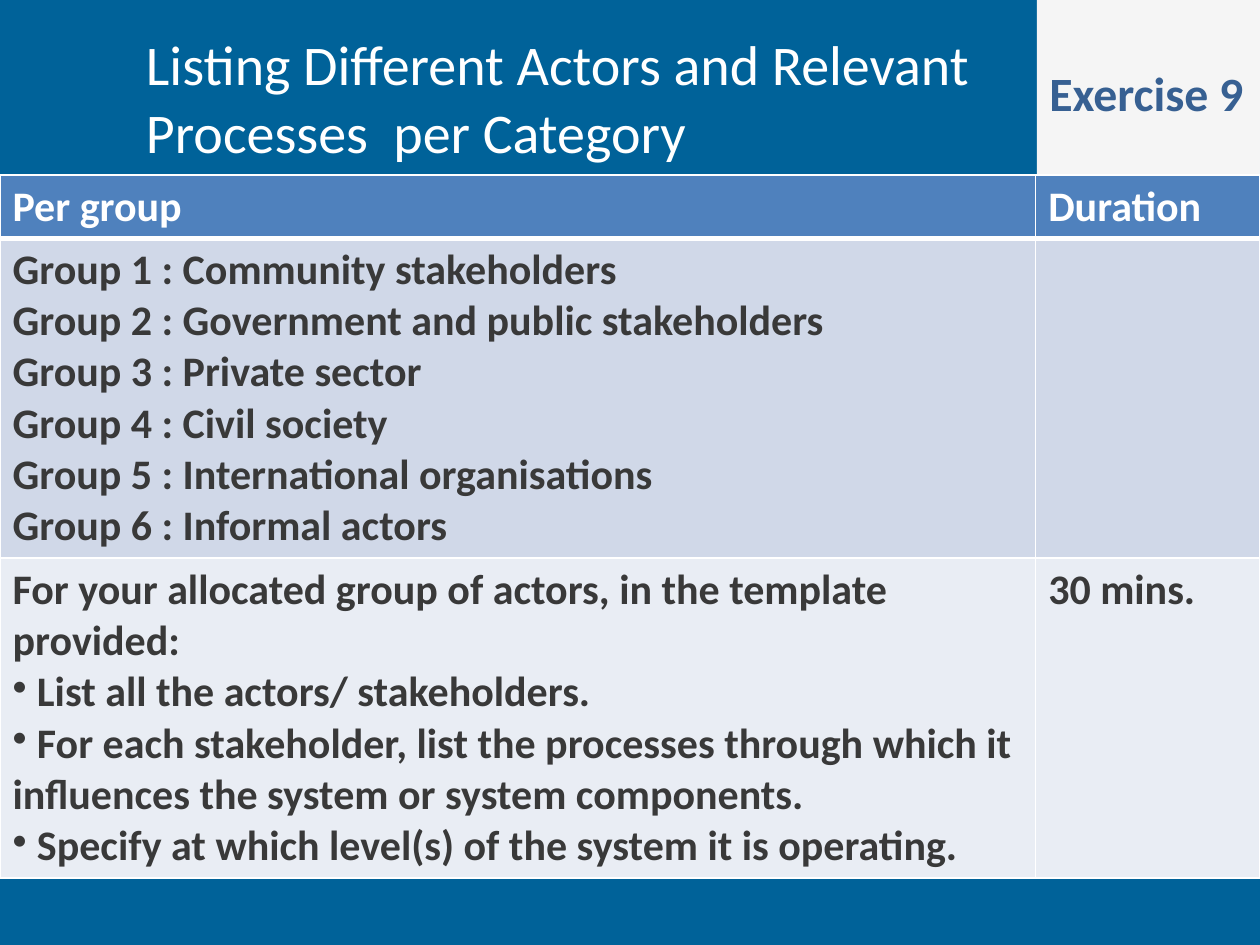
import pptx
import pptx.dml.color
import pptx.enum.shapes
import pptx.enum.text
import pptx.oxml.ns
import pptx.util
from lxml import etree

Inches = pptx.util.Inches
Pt = pptx.util.Pt
WHITE = "FFFFFF"
DARK = "393939"
HEADER = "4F81BD"
GROUPS = [
    "Community stakeholders",
    "Government and public stakeholders",
    "Private sector",
    "Civil society",
    "International organisations",
    "Informal actors",
]
TASKS = [
    "For your allocated group of actors, in the template provided:",
    "• List all the actors/ stakeholders.",
    "• For each stakeholder, list the processes through which it "
    "influences the system or system components.",
    "• Specify at which level(s) of the system it is operating.",
]
# Each row: height, fill, text colour, paragraphs of each cell
ROWS = [
    (0.5, HEADER, WHITE, [["Per group"], ["Duration"]]),
    (2.54, "D0D8E8", DARK,
     [[f"Group {number} : {name}" for number, name in enumerate(GROUPS, 1)], []]),
    (2.54, "E9EDF4", DARK, [TASKS, ["30 mins."]]),
]


def rgb(value):
    return pptx.dml.color.RGBColor.from_string(value)


class SlideBuilder:
    font = "Calibri"

    def __init__(self, slide, background):
        self.slide = slide
        slide.background.fill.solid()
        slide.background.fill.fore_color.rgb = rgb(background)

    def add_text(self, frame, texts, size, color, bold=False):
        """Fill a text frame; a leading bullet sign becomes a real bullet."""
        for index, text in enumerate(texts):
            paragraph = frame.paragraphs[0] if index == 0 else frame.add_paragraph()
            paragraph.alignment = pptx.enum.text.PP_ALIGN.LEFT
            if text.startswith("•"):
                properties = paragraph._p.get_or_add_pPr()
                properties.set("marL", "0")
                properties.set("indent", "0")
                bullet = etree.SubElement(properties, pptx.oxml.ns.qn("a:buChar"))
                bullet.set("char", "•")
                text = text[1:]
            run = paragraph.add_run()
            run.text = text
            run.font.name = self.font
            run.font.size = Pt(size)
            run.font.bold = bold
            run.font.color.rgb = rgb(color)

    def text_box(self, box, text, size, color):
        shape = self.slide.shapes.add_textbox(*map(Inches, box))
        frame = shape.text_frame
        frame.word_wrap = True
        frame.vertical_anchor = pptx.enum.text.MSO_ANCHOR.MIDDLE
        self.add_text(frame, [text], size, color)

    def label(self, box, text, size, color, fill):
        shape = self.slide.shapes.add_shape(
            pptx.enum.shapes.MSO_SHAPE.RECTANGLE, *map(Inches, box))
        shape.shadow.inherit = False
        shape.fill.solid()
        shape.fill.fore_color.rgb = rgb(fill)
        shape.line.fill.background()
        frame = shape.text_frame
        frame.word_wrap = False
        frame.vertical_anchor = pptx.enum.text.MSO_ANCHOR.MIDDLE
        self.add_text(frame, [text], size, color, bold=True)

    def borders(self, cell, widths):
        """Draw white cell borders; this must come before the cell fill."""
        properties = cell._tc.get_or_add_tcPr()
        for side, width in widths.items():
            line = etree.SubElement(properties, pptx.oxml.ns.qn(f"a:ln{side}"))
            line.set("w", str(Pt(width)))
            fill = etree.SubElement(line, pptx.oxml.ns.qn("a:solidFill"))
            color = etree.SubElement(fill, pptx.oxml.ns.qn("a:srgbClr"))
            color.set("val", WHITE)

    def table(self, left, top, widths, rows, size):
        total_height = sum(row[0] for row in rows)
        table = self.slide.shapes.add_table(
            len(rows), len(widths), Inches(left), Inches(top),
            Inches(sum(widths)), Inches(total_height)).table
        for column, width in zip(table.columns, widths):
            column.width = Inches(width)
        for row_index, (height, fill, color, contents) in enumerate(rows):
            table.rows[row_index].height = Inches(height)
            sides = {"L": 1, "R": 1,
                     "T": 3 if row_index == 1 else 1,
                     "B": 3 if row_index == 0 else 1}
            for column_index, texts in enumerate(contents):
                cell = table.cell(row_index, column_index)
                self.borders(cell, sides)
                cell.fill.solid()
                cell.fill.fore_color.rgb = rgb(fill)
                self.add_text(cell.text_frame, texts, size, color, bold=True)


def main():
    presentation = pptx.Presentation()
    presentation.slide_width = Inches(10)
    presentation.slide_height = Inches(7.5)
    slide = presentation.slides.add_slide(presentation.slide_layouts[6])
    builder = SlideBuilder(slide, "006299")
    builder.text_box(
        (1.06, 0.21, 6.89, 1.12),
        "Listing Different Actors and Relevant Processes  per Category", 32, WHITE)
    builder.label((8.23, 0, 1.77, 1.47), "Exercise 9", 27.3, "376092", "F5F5F5")
    builder.table(0, 1.39, [8.22, 1.78], ROWS, 24)
    presentation.save("out.pptx")


if __name__ == "__main__":
    main()
